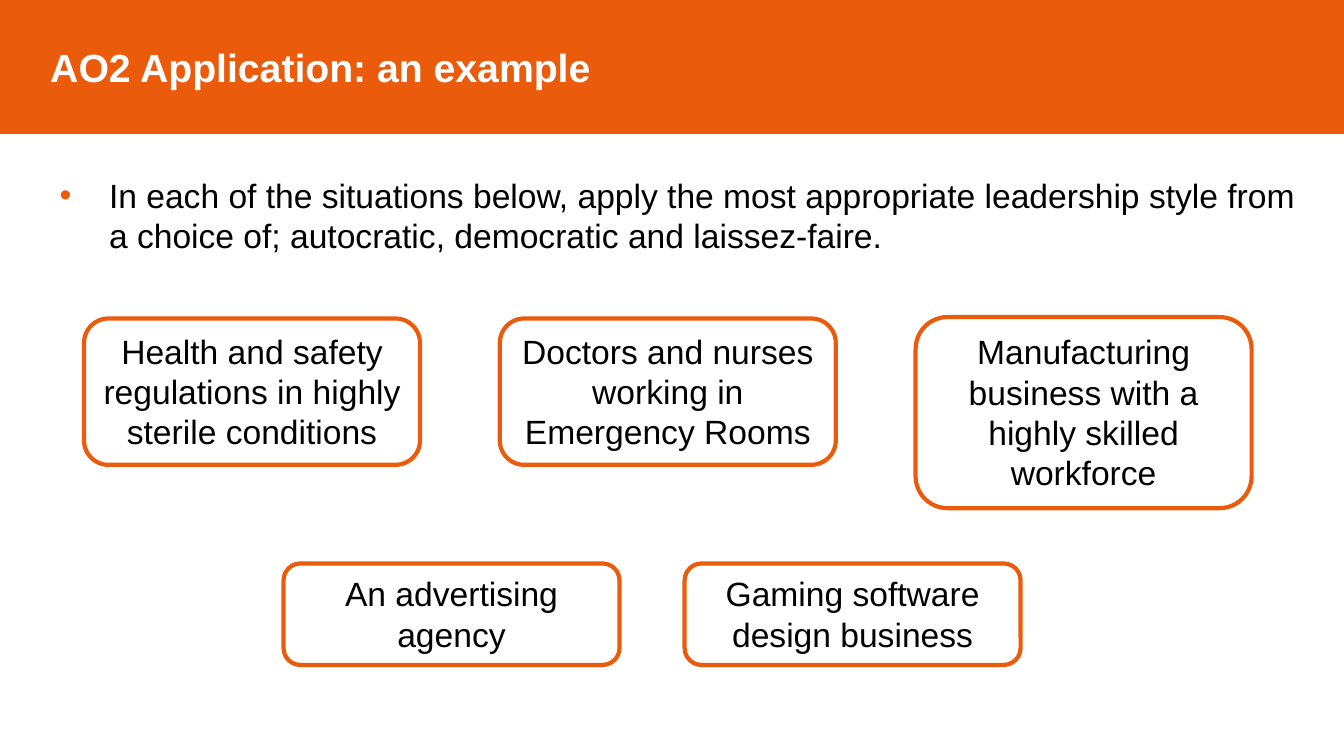
from lxml import etree
from pptx import Presentation
from pptx.dml.color import RGBColor
from pptx.enum import shapes, text
from pptx.oxml import ns
from pptx.util import Pt

COLORS = {"orange": "EA5B0C", "white": "FFFFFF", "black": "000000"}
FONT = "Arial"
CARD_WIDTH = 240
TOP_ROW_LEFT, TOP_ROW_STEP = 60, 297
BOTTOM_ROW_LEFT, BOTTOM_ROW_STEP = 202.5, 286.5
TOP_ROW = [
    ("Health and safety regulations in highly sterile conditions", 227.5, 104.5),
    ("Doctors and nurses working in Emergency Rooms", 227.5, 104.5),
    ("Manufacturing business with a highly skilled workforce", 226.5, 136.5),
]
BOTTOM_ROW = [
    ("An advertising agency", 402.5, 72.5),
    ("Gaming software design business", 402.5, 72.5),
]


def color(name):
    return RGBColor.from_string(COLORS[name])


def write(shape, words, size, font_color, alignment, bold=False):
    frame = shape.text_frame
    frame.word_wrap = True
    frame.text = words
    paragraph = frame.paragraphs[0]
    paragraph.alignment = alignment
    for run in paragraph.runs:
        run.font.name = FONT
        run.font.size = Pt(size)
        run.font.bold = bold
        run.font.color.rgb = color(font_color)
    return paragraph


def set_indent(paragraph, margin, first_line=0):
    properties = paragraph._p.get_or_add_pPr()
    properties.set("marL", str(Pt(margin)))
    properties.set("indent", str(Pt(first_line)))
    return properties


def add_bullet(paragraph, indent):
    properties = set_indent(paragraph, indent, -indent)
    bullet_color = etree.SubElement(properties, ns.qn("a:buClr"))
    etree.SubElement(bullet_color, ns.qn("a:srgbClr"), val=COLORS["orange"])
    etree.SubElement(properties, ns.qn("a:buFont"), typeface=FONT)
    etree.SubElement(properties, ns.qn("a:buChar"), char="•")


def add_outlined_shape(slide, kind, left, top, width, height, line_width):
    shape = slide.shapes.add_shape(kind, Pt(left), Pt(top), Pt(width), Pt(height))
    shape.shadow.inherit = False
    shape.line.color.rgb = color("orange")
    shape.line.width = Pt(line_width)
    return shape


def add_banner(slide, title):
    banner = add_outlined_shape(
        slide, shapes.MSO_SHAPE.RECTANGLE, 0, 0, 960, 95, 1)
    banner.fill.solid()
    banner.fill.fore_color.rgb = color("orange")
    banner.text_frame.vertical_anchor = text.MSO_ANCHOR.MIDDLE
    paragraph = write(banner, title, 28, "white", text.PP_ALIGN.LEFT, bold=True)
    set_indent(paragraph, 28.8)


def add_task(slide, words):
    box = slide.shapes.add_textbox(Pt(35.5), Pt(121.5), Pt(907), Pt(65.5))
    paragraph = write(box, words, 24, "black", text.PP_ALIGN.LEFT)
    box.text_frame.auto_size = text.MSO_AUTO_SIZE.SHAPE_TO_FIT_TEXT
    paragraph.level = 1
    paragraph.space_after = Pt(12)
    add_bullet(paragraph, 35.3)


def add_card(slide, words, left, top, height):
    card = add_outlined_shape(
        slide, shapes.MSO_SHAPE.ROUNDED_RECTANGLE, left, top, CARD_WIDTH, height, 3)
    card.fill.background()
    card.text_frame.vertical_anchor = text.MSO_ANCHOR.TOP
    write(card, words, 24, "black", text.PP_ALIGN.CENTER)
    card.text_frame.auto_size = text.MSO_AUTO_SIZE.SHAPE_TO_FIT_TEXT


def add_card_row(slide, cards, left, step):
    for index, (words, top, height) in enumerate(cards):
        add_card(slide, words, left + index * step, top, height)


def main():
    presentation = Presentation()
    presentation.slide_width = Pt(960)
    presentation.slide_height = Pt(540)
    slide = presentation.slides.add_slide(presentation.slide_layouts[6])
    add_banner(slide, "AO2 Application: an example")
    add_task(slide, "In each of the situations below, apply the most appropriate "
                    "leadership style from a choice of; autocratic, democratic "
                    "and laissez-faire.")
    add_card_row(slide, TOP_ROW, TOP_ROW_LEFT, TOP_ROW_STEP)
    add_card_row(slide, BOTTOM_ROW, BOTTOM_ROW_LEFT, BOTTOM_ROW_STEP)
    presentation.save("out.pptx")


if __name__ == "__main__":
    main()
